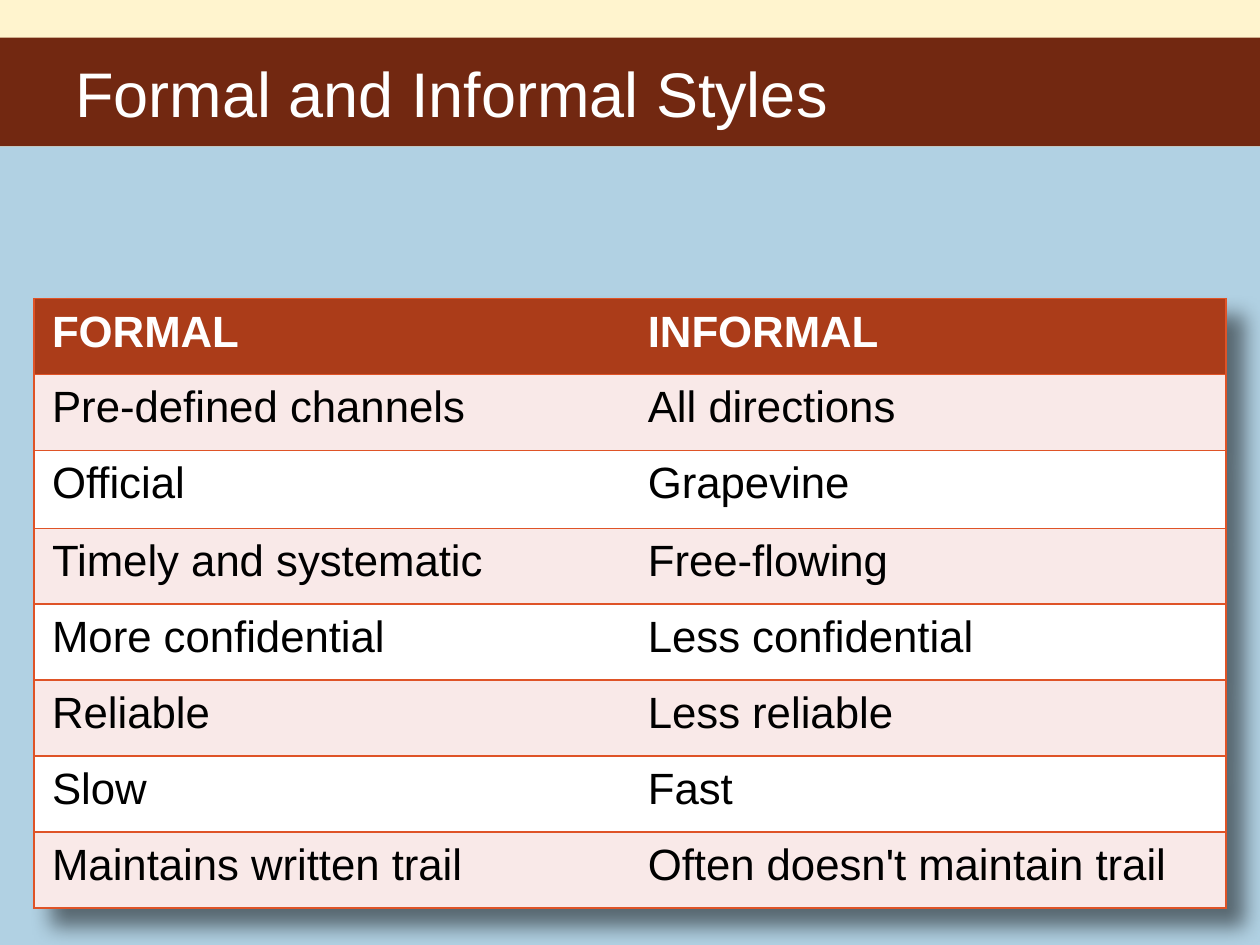
from lxml import etree
from pptx import Presentation
from pptx.dml.color import RGBColor
from pptx.enum.shapes import MSO_SHAPE
from pptx.enum.text import MSO_ANCHOR, PP_ALIGN
from pptx.oxml import parse_xml
from pptx.util import Cm, Pt

RECTANGLE = MSO_SHAPE.RECTANGLE
MIDDLE = MSO_ANCHOR.MIDDLE
LEFT = PP_ALIGN.LEFT
DRAWING = "http://schemas.openxmlformats.org/drawingml/2006/main"
PLAIN_STYLE = "{2D5ABB26-0587-4C30-8999-92F81FD0307C}"
BORDER_COLOR = "DF5327"


def color(code):
    return RGBColor.from_string(code)


def write(para, text, size, code, bold):
    para.alignment = LEFT
    span = para.add_run()
    span.text = text
    formats = {"name": "Arial", "size": Pt(size), "bold": bold}
    for name, value in formats.items():
        setattr(span.font, name, value)
    span.font.color.rgb = color(code)


deck = Presentation()
deck.slide_width, deck.slide_height = Cm(25.4), Cm(19.05)
page = deck.slides.add_slide(deck.slide_layouts[6])
page.background.fill.solid()
page.background.fill.fore_color.rgb = color("FFF4CE")

# Blue body panel and brown title band
bands = [(2.95, 16.1, "B1D1E3"), (0.76, 2.19, "722811")]
for top, height, code in bands:
    band = page.shapes.add_shape(RECTANGLE, 0, Cm(top), Cm(25.4), Cm(height))
    band.shadow.inherit = False
    band.fill.solid()
    band.fill.fore_color.rgb = color(code)
    band.line.fill.background()

# Title text sits in the last band
title = band.text_frame
title.word_wrap = True
title.vertical_anchor = MIDDLE
title.margin_left = Cm(1.52)
write(title.paragraphs[0], "Formal and Informal Styles", 36, "FFFFFF", False)

# Comparison table
rows = [
    ("FORMAL", "INFORMAL"),
    ("Pre-defined channels", "All directions"),
    ("Official", "Grapevine"),
    ("Timely and systematic", "Free-flowing"),
    ("More confidential", "Less confidential"),
    ("Reliable", "Less reliable"),
    ("Slow", "Fast"),
    ("Maintains written trail", "Often doesn't maintain trail"),
]
frame = page.shapes.add_table(len(rows), 2, Cm(0.69), Cm(6.02), Cm(24.03), Cm(12.26))
table = frame.table
table.first_row = table.horz_banding = False
for column in table.columns:
    column.width = Cm(12.01)

# Plain table style with a soft shadow to the lower right
properties = table._tbl.tblPr
properties.find(f"{{{DRAWING}}}tableStyleId").text = PLAIN_STYLE
properties.insert(0, parse_xml(
    f'<a:effectLst xmlns:a="{DRAWING}"><a:outerShdw blurRad="{Cm(0.4)}" '
    f'dist="{Cm(0.5)}" dir="2700000" algn="tl" rotWithShape="0">'
    '<a:srgbClr val="000000"><a:alpha val="50000"/></a:srgbClr>'
    '</a:outerShdw></a:effectLst>'))

margins = {"margin_left": 0.36, "margin_right": 0.36, "margin_top": 0.18, "margin_bottom": 0.18}
for row, texts in enumerate(rows):
    table.rows[row].height = Cm(1.57 if row == 2 else 1.53)
    header = row == 0
    fill_code = "AB3C19" if header else ("FFFFFF", "F9E9E8")[row % 2]
    for column, text in enumerate(texts):
        cell = table.cell(row, column)
        for name, value in margins.items():
            setattr(cell, name, Cm(value))
        # Outer edges and row rules only, no line between the columns
        for side in ("lnL" if column == 0 else "lnR", "lnT", "lnB"):
            edge = etree.SubElement(cell._tc.get_or_add_tcPr(), f"{{{DRAWING}}}{side}", w=str(Pt(1)))
            solid = etree.SubElement(edge, f"{{{DRAWING}}}solidFill")
            etree.SubElement(solid, f"{{{DRAWING}}}srgbClr", val=BORDER_COLOR)
        cell.fill.solid()
        cell.fill.fore_color.rgb = color(fill_code)
        write(cell.text_frame.paragraphs[0], text, 25, "FFFFFF" if header else "000000", header)

deck.save("out.pptx")
